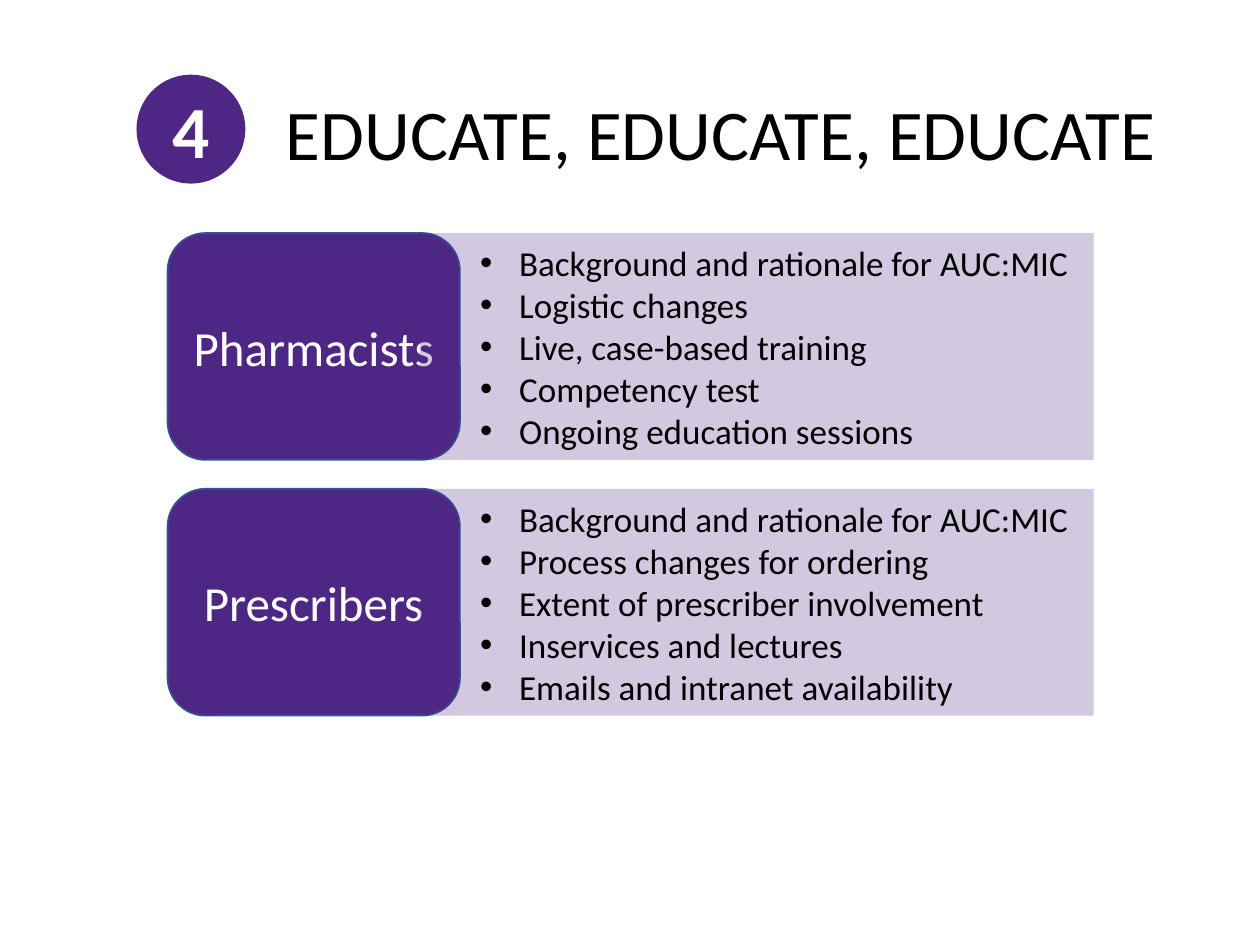
from dataclasses import dataclass

from lxml.etree import SubElement
from pptx import Presentation
from pptx.dml.color import RGBColor
from pptx.enum.shapes import MSO_SHAPE as Preset
from pptx.enum.text import MSO_ANCHOR as Anchor, MSO_AUTO_SIZE as AutoSize, PP_ALIGN as Align
from pptx.oxml.ns import qn
from pptx.shapes.autoshape import Shape
from pptx.slide import Slide
from pptx.text.text import _Paragraph as Paragraph
from pptx.util import Inches, Pt


@dataclass(frozen=True)
class Theme:
    font: str = "Calibri"
    purple: RGBColor = RGBColor(0x4E, 0x27, 0x84)
    card_edge: RGBColor = RGBColor(0x32, 0x54, 0x91)
    black: RGBColor = RGBColor(0, 0, 0)
    white: RGBColor = RGBColor(255, 255, 255)
    panel_opacity: int = 25
    title_size: float = 40.7
    number_size: float = 42
    card_size: float = 28
    list_size: float = 20


@dataclass(frozen=True)
class Box:
    left: float
    top: float
    width: float
    height: float


@dataclass(frozen=True)
class Audience:
    name: str
    topics: tuple[str, ...]


THEME = Theme()
TITLE_BOX = Box(1.94, 0.6, 7.56, 0.85)
NUMBER_BOX = Box(1.09, 0.6, 0.85, 0.85)
ROW_TOP, ROW_HEIGHT, ROW_STEP = 1.85, 1.8, 2.03
AUDIENCES = (
    Audience("Pharmacists", (
        "Background and rationale for AUC:MIC",
        "Logistic changes",
        "Live, case-based training",
        "Competency test",
        "Ongoing education sessions",
    )),
    Audience("Prescribers", (
        "Background and rationale for AUC:MIC",
        "Process changes for ordering",
        "Extent of prescriber involvement",
        "Inservices and lectures",
        "Emails and intranet availability",
    )),
)


def place(shape: Shape, box: Box) -> None:
    shape.left, shape.top = Inches(box.left), Inches(box.top)
    shape.width, shape.height = Inches(box.width), Inches(box.height)


def style(para: Paragraph, size: float, color: RGBColor, bold: bool = False) -> None:
    font = para.font
    font.name, font.size, font.bold = THEME.font, Pt(size), bold
    font.color.rgb = color


def add_bullet(para: Paragraph) -> None:
    properties = para._p.get_or_add_pPr()
    properties.set("marL", str(Inches(0.69)))
    properties.set("indent", str(Inches(-0.31)))
    SubElement(properties, qn("a:buFont"), typeface="Arial")
    SubElement(properties, qn("a:buChar"), char="•")


def add_label(slide: Slide, preset: Preset, box: Box, text: str, size: float,
              edge: RGBColor, bold: bool = False) -> Shape:
    """Add a solid purple shape with centred white text."""
    shape = slide.shapes.add_shape(preset, 0, 0, 0, 0)
    place(shape, box)
    shape.shadow.inherit = False
    shape.fill.solid()
    shape.fill.fore_color.rgb = THEME.purple
    shape.line.color.rgb = edge
    shape.line.width = Pt(1)
    frame = shape.text_frame
    frame.vertical_anchor = Anchor.MIDDLE
    frame.word_wrap = True
    frame.text = text
    para = frame.paragraphs[0]
    para.alignment = Align.CENTER
    style(para, size, THEME.white, bold)
    return shape


def fill_panel(panel: Shape, box: Box, topics: tuple[str, ...]) -> None:
    """Turn a body placeholder into a tinted panel with a bulleted list."""
    place(panel, box)
    panel.fill.solid()
    panel.fill.fore_color.rgb = THEME.purple
    color = panel.element.spPr.find(f".//{qn('a:srgbClr')}")
    SubElement(color, qn("a:alpha"), val=str(THEME.panel_opacity * 1000))
    frame = panel.text_frame
    frame.auto_size = AutoSize.NONE
    frame.vertical_anchor = Anchor.MIDDLE
    frame.text = "\n".join(topics)
    for para in frame.paragraphs:
        add_bullet(para)
        para.space_before = Pt(0)
        style(para, THEME.list_size, THEME.black)


def set_title(title: Shape, text: str) -> None:
    place(title, TITLE_BOX)
    frame = title.text_frame
    frame.auto_size = AutoSize.NONE
    frame.vertical_anchor = Anchor.BOTTOM
    frame.text = text
    para = frame.paragraphs[0]
    para.alignment = Align.CENTER
    para.line_spacing = 0.9
    style(para, THEME.title_size, THEME.black)


def main() -> None:
    deck = Presentation()
    deck.slide_width, deck.slide_height = Inches(10), Inches(7.5)
    two_content = deck.slide_layouts[3]
    slide = deck.slides.add_slide(two_content)
    title, *panels = slide.placeholders

    # Heading with its step number
    set_title(title, "EDUCATE, EDUCATE, EDUCATE")
    add_label(slide, Preset.OVAL, NUMBER_BOX, "4", THEME.number_size,
              THEME.purple, bold=True)

    # One row per audience: name card, then the panel overlapping it
    for row, (audience, panel) in enumerate(zip(AUDIENCES, panels)):
        top = ROW_TOP + row * ROW_STEP
        card = add_label(slide, Preset.ROUNDED_RECTANGLE, Box(1.33, top, 2.32, ROW_HEIGHT),
                         audience.name, THEME.card_size, THEME.card_edge)
        fill_panel(panel, Box(3.33, top, 5.35, ROW_HEIGHT), audience.topics)
        card.element.addnext(panel.element)

    deck.save("out.pptx")


if __name__ == "__main__":
    main()
